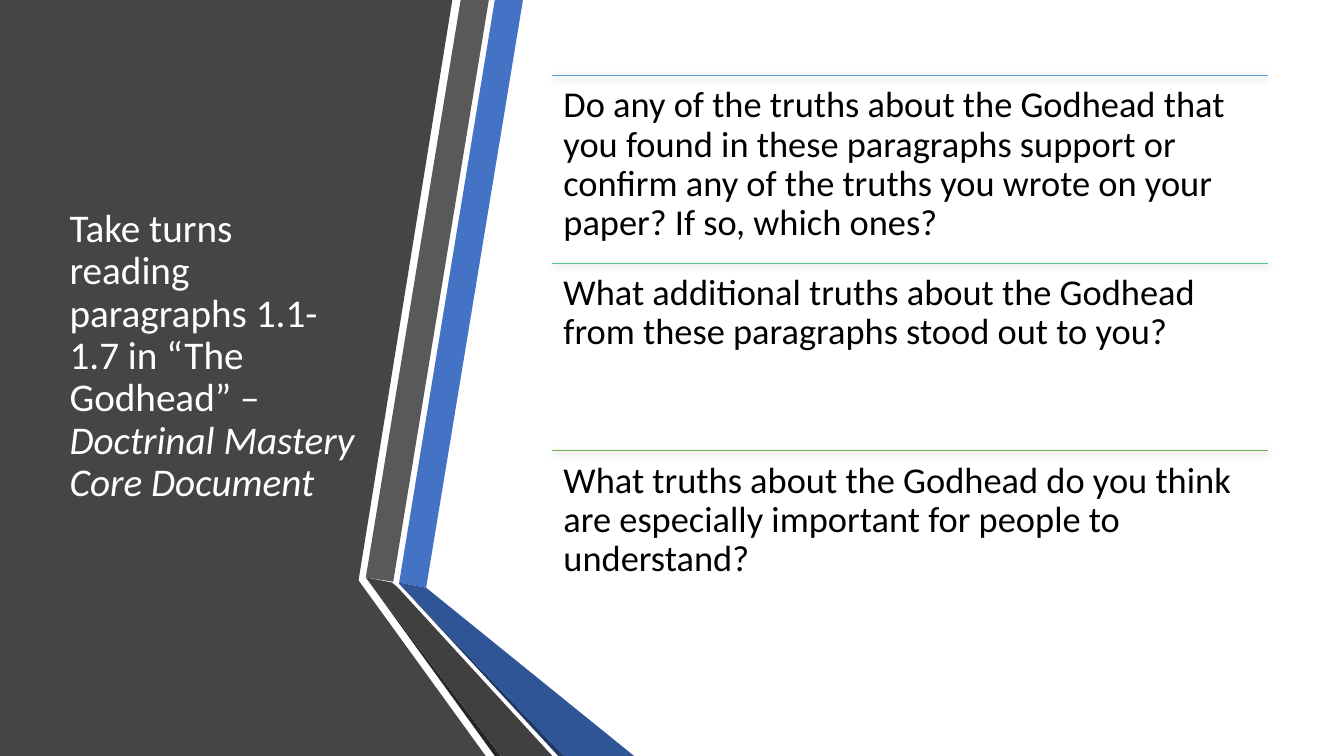
from lxml.etree import SubElement
from pptx import Presentation
from pptx.dml.color import RGBColor
from pptx.enum.text import MSO_ANCHOR, MSO_AUTO_SIZE, PP_ALIGN
from pptx.oxml.ns import qn
from pptx.util import Cm, Pt

HUES = {
    "panel": "454545", "blue": "4472C4", "grey": "595959", "black": "262626",
    "navy": "203864", "deep": "2F5597", "dark": "404040", "white": "FFFFFF",
    "text": "000000", "sky": "5B9BD5", "mint": "4DC58D", "green": "70AD47",
}


def hue(name):
    return RGBColor.from_string(HUES[name])


def style(par, size, name):
    par.line_spacing = 0.9
    par.alignment = PP_ALIGN.LEFT
    for run in par.runs:
        run.font.size = Pt(size)
        run.font.name = "Calibri"
        run.font.color.rgb = hue(name)


deck = Presentation()
deck.slide_width, deck.slide_height = Cm(33.87), Cm(19.05)
slide = deck.slides.add_slide(deck.slide_layouts[5])
shapes = slide.shapes

bands = [
    ("panel", [(0, 0), (11.4, 0), (9.04, 14.61), (9.04, 14.63), (12.24, 19.05), (0, 19.05)]),
    ("blue", [(10.06, 14.68), (10.74, 14.81), (13.18, 0), (12.47, 0)]),
    ("grey", [(12.32, 0), (11.61, 0), (9.22, 14.55), (9.91, 14.66)]),
    ("black", [(9.22, 14.55), (12.47, 19.05), (12.62, 19.05)]),
    ("navy", [(10.06, 14.71), (14.07, 19.05), (14.22, 19.05)]),
    ("deep", [(10.06, 14.71), (14.22, 19.05), (15.98, 19.05), (10.74, 14.81), (10.06, 14.68)]),
    ("dark", [(13.92, 19.05), (10.03, 14.81), (9.88, 14.68), (9.22, 14.55), (12.62, 19.05)]),
]
for name, spots in bands:
    spots = [(Cm(x), Cm(y)) for x, y in spots]
    pen = shapes.build_freeform(*spots[0])
    pen.add_line_segments(spots[1:], close=True)
    band = pen.convert_to_shape()
    band.shadow.inherit = False
    band.fill.solid()
    band.fill.fore_color.rgb = hue(name)
    band.line.fill.background()

title = shapes.title
title.left, title.top, title.width, title.height = Cm(1.5), Cm(1.9), Cm(7.72), Cm(14.18)
shapes._spTree.append(title._element)
frame = title.text_frame
frame.text = "Take turns reading paragraphs 1.1-1.7 in “The Godhead” – "
frame.word_wrap = True
frame.auto_size = MSO_AUTO_SIZE.NONE
frame.vertical_anchor = MSO_ANCHOR.MIDDLE
par = frame.paragraphs[0]
book = par.add_run()
book.text = "Doctrinal Mastery Core Document"
book.font.italic = True
style(par, 28, "white")

asks = [
    ("sky", "Do any of the truths about the Godhead that you found in these paragraphs support or confirm any of the truths you wrote on your paper? If so, which ones?"),
    ("mint", "What additional truths about the Godhead from these paragraphs stood out to you?"),
    ("green", "What truths about the Godhead do you think are especially important for people to understand?"),
]
left, top, wide, high = 13.92, 1.9, 18.03, 4.73
for row, (name, ask) in enumerate(asks):
    y = Cm(top + row * high)
    rule = shapes.add_connector(1, Cm(left), y, Cm(left + wide), y)
    rule.line.color.rgb = hue(name)
    rule.line.width = Pt(0.5)
    glow = SubElement(rule._element.spPr, qn("a:effectLst"))
    shade = SubElement(glow, qn("a:outerShdw"), blurRad=str(Pt(4.5)),
                       dist=str(Pt(1.5)), dir="5400000", algn="ctr", rotWithShape="0")
    tint = SubElement(shade, qn("a:srgbClr"), val=HUES["text"])
    SubElement(tint, qn("a:alpha"), val="63000")

    box = shapes.add_textbox(Cm(left), y, Cm(wide), Cm(high))
    frame = box.text_frame
    frame.text = ask
    frame.word_wrap = True
    frame.margin_left = frame.margin_right = Cm(0.28)
    frame.margin_top = frame.margin_bottom = Cm(0.28)
    style(frame.paragraphs[0], 26, "text")

deck.save("out.pptx")
